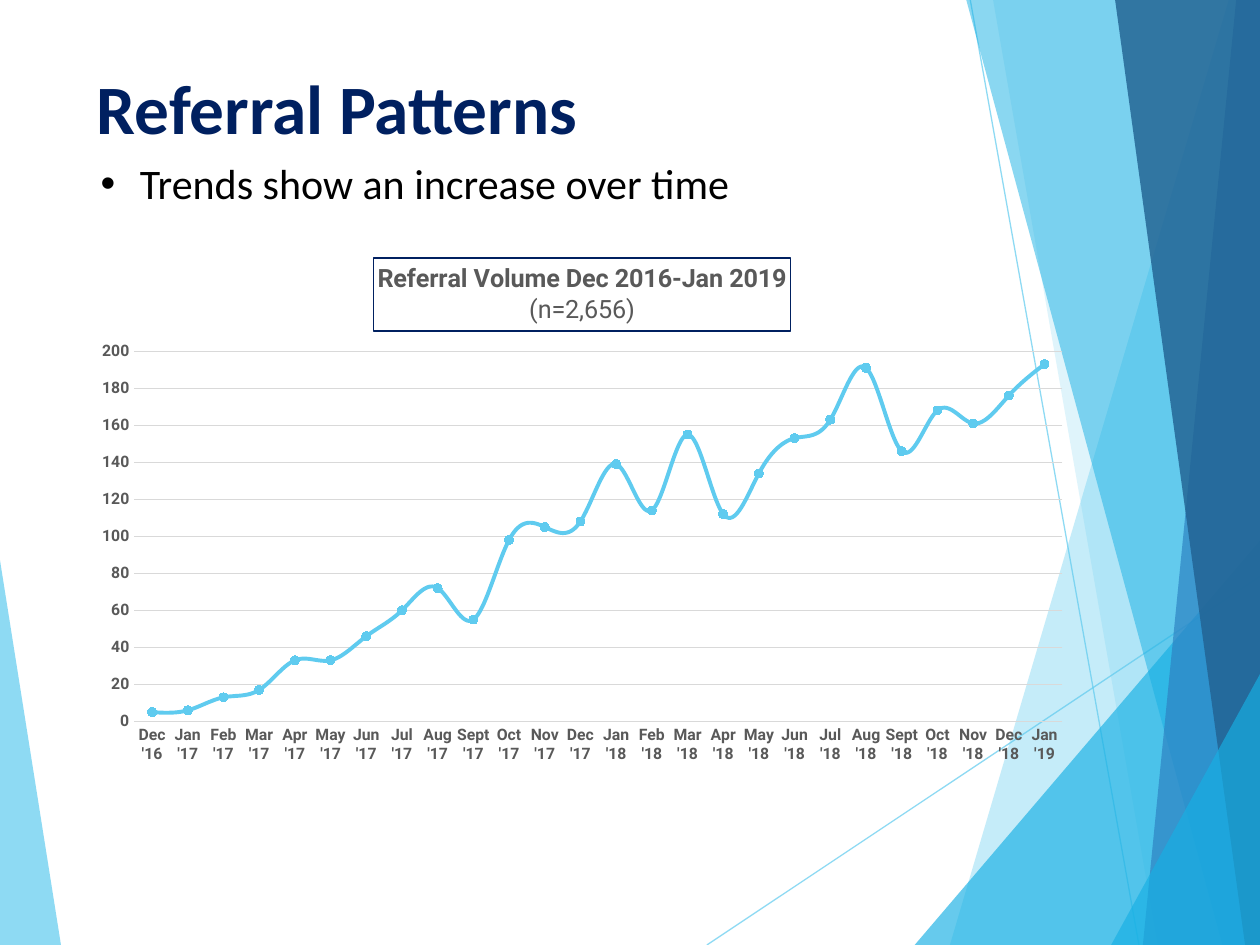
"""Build the Referral Patterns slide: heading, takeaway and monthly referral line chart."""
import pptx
import pptx.chart.data
import pptx.dml.color
import pptx.enum.chart
import pptx.enum.shapes
import pptx.enum.text
import pptx.util
from lxml import etree
from pptx.oxml.ns import qn

Cm, Pt = pptx.util.Cm, pptx.util.Pt
W, H = 25.4, 19.05
COLORS = {"navy": "002060", "black": "000000", "gray": "595959", "grid": "D9D9D9",
          "sky": "5FCBEF", "cyan": "17B0E4", "blue": "2E83C3", "deep": "226292"}

TITLE = "Referral Patterns"
TAKEAWAY = "Trends show an increase over time"
CHART_TITLE = ["Referral Volume Dec 2016-Jan 2019", "(n=2,656)"]
MONTHS = "Jan Feb Mar Apr May Jun Jul Aug Sept Oct Nov Dec".split()
CATEGORIES = (["Dec '16"] + [f"{m} '{y}" for y in (17, 18) for m in MONTHS] + ["Jan '19"])
REFERRALS = [5, 6, 13, 17, 33, 33, 46, 60, 72, 55, 98, 105, 108, 139, 114, 155, 112,
             134, 153, 163, 191, 146, 168, 161, 176, 193]

RAYS = [((14.25, H), (W, 11.62)), ((19.56, 0), (22.96, H))]
# side, top of slanted edge, foot of slanted edge, color, opacity
PANELS = [
    (0, (0, 11.29), 1.23, "sky", 70),
    (W, (24.77, 0), 19.15, "sky", 36),
    (W, (20.02, 0), 23.34, "sky", 20),
    (W, (W, 10.9), 18.44, "cyan", 66),
    (W, (19.48, 0), 24.64, "cyan", 50),
    (W, (24.92, 0), 23.04, "blue", 70),
    (W, (22.48, 0), 25.1, "deep", 82),
    (W, (W, 13.59), 22.4, "cyan", 66),
]


def rgb(name):
    return pptx.dml.color.RGBColor.from_string(COLORS[name])


def paint(fill, name):
    fill.solid()
    fill.fore_color.rgb = rgb(name)


def set_opacity(sp, percent):
    for clr in sp._element.spPr.iter(qn("a:srgbClr")):
        etree.SubElement(clr, qn("a:alpha")).set("val", str(percent * 1000))


def style(font, size, color, name, bold=False):
    font.size, font.name, font.bold = Pt(size), name, bold
    font.color.rgb = rgb(color)


def add_ray(s, start, end):
    ln = s.shapes.add_connector(pptx.enum.shapes.MSO_CONNECTOR.STRAIGHT,
                                *[Cm(v) for v in start + end])
    ln.line.color.rgb = rgb("sky")
    ln.line.width = Pt(0.75)
    set_opacity(ln, 70)
    etree.SubElement(ln._element.spPr, qn("a:effectLst"))


def add_panel(s, side, top, foot, color, opacity):
    points = [(Cm(x), Cm(y)) for x, y in (top, (foot, H), (side, H), (side, top[1]))]
    fb = s.shapes.build_freeform(*points[0])
    fb.add_line_segments(points[1:], close=True)
    sp = fb.convert_to_shape()
    sp.shadow.inherit = False
    paint(sp.fill, color)
    sp.line.fill.background()
    set_opacity(sp, opacity)


def add_text(s, text, box, size, color, bold=False):
    tf = s.shapes.add_textbox(*[Cm(v) for v in box]).text_frame
    tf.word_wrap = True
    tf.vertical_anchor = pptx.enum.text.MSO_ANCHOR.TOP
    tf.text = text
    p = tf.paragraphs[0]
    style(p.runs[0].font, size, color, "Calibri", bold)
    return p


def add_bullet(p, indent):
    pPr = p._p.get_or_add_pPr()
    pPr.set("marL", str(Cm(indent)))
    pPr.set("indent", str(-Cm(indent)))
    etree.SubElement(pPr, qn("a:buFont")).set("typeface", "Arial")
    etree.SubElement(pPr, qn("a:buChar")).set("char", "•")


def place(part, **fractions):
    """Give a chart part a manual layout in fractions of the chart."""
    for old in part.findall(qn("c:layout")):
        part.remove(old)
    layout = etree.Element(qn("c:layout"))
    manual = etree.SubElement(layout, qn("c:manualLayout"))
    if "w" in fractions:
        etree.SubElement(manual, qn("c:layoutTarget")).set("val", "inner")
    for key in ("x", "y"):
        etree.SubElement(manual, qn(f"c:{key}Mode")).set("val", "edge")
    for key, value in fractions.items():
        etree.SubElement(manual, qn(f"c:{key}")).set("val", str(value))
    tx = part.find(qn("c:tx"))
    if tx is None:
        part.insert(0, layout)
    else:
        tx.addnext(layout)


def add_chart_title(chart):
    title = chart.chart_title
    tf = title.text_frame
    tf.text = "\n".join(CHART_TITLE)
    for i, p in enumerate(tf.paragraphs):
        style(p.runs[0].font, 14.4, "gray", "Roboto", bold=i == 0)
    title.include_in_layout = False
    title.format.line.color.rgb = rgb("navy")
    title.format.line.width = Pt(0.75)
    place(title._element, x=0.29, y=0.03)


def add_chart(s):
    data = pptx.chart.data.CategoryChartData()
    data.categories = CATEGORIES
    data.add_series("Series 1", REFERRALS)
    xl = pptx.enum.chart
    chart = s.shapes.add_chart(xl.XL_CHART_TYPE.LINE_MARKERS, Cm(1.7), Cm(4.88),
                               Cm(20.12), Cm(10.74), data).chart
    style(chart.font, 10, "black", "Roboto")
    chart.has_legend = False
    add_chart_title(chart)
    place(chart._chartSpace.chart.plotArea, x=0.05, y=0.205, w=0.93, h=0.695)

    for axis in (chart.category_axis, chart.value_axis):
        style(axis.tick_labels.font, 9, "gray", "Roboto", bold=True)
        axis.major_tick_mark = axis.minor_tick_mark = xl.XL_TICK_MARK.NONE
    values = chart.value_axis
    values.minimum_scale, values.maximum_scale, values.major_unit = 0, 200, 20
    values.format.line.fill.background()
    for line in (chart.category_axis.format.line, values.major_gridlines.format.line):
        line.color.rgb = rgb("grid")
        line.width = Pt(0.75)

    chart.plots[0].vary_by_categories = False
    series = chart.plots[0].series[0]
    series.smooth = True
    series.format.line.color.rgb = rgb("sky")
    series.format.line.width = Pt(2.25)
    series.marker.style = xl.XL_MARKER_STYLE.CIRCLE
    series.marker.size = 5
    paint(series.marker.format.fill, "sky")
    series.marker.format.line.color.rgb = rgb("sky")


def main():
    prs = pptx.Presentation()
    prs.slide_width, prs.slide_height = Cm(W), Cm(H)
    s = prs.slides.add_slide(prs.slide_layouts[6])
    for ray in RAYS:
        add_ray(s, *ray)
    for panel in PANELS:
        add_panel(s, *panel)
    add_text(s, TITLE, (1.7, 1.2, 17.63, 1.78), 39.6, "navy", bold=True)
    add_bullet(add_text(s, TAKEAWAY, (1.78, 3.05, 22.66, 1.27), 24, "black"), 0.79)
    add_chart(s)
    prs.save("out.pptx")


if __name__ == "__main__":
    main()
